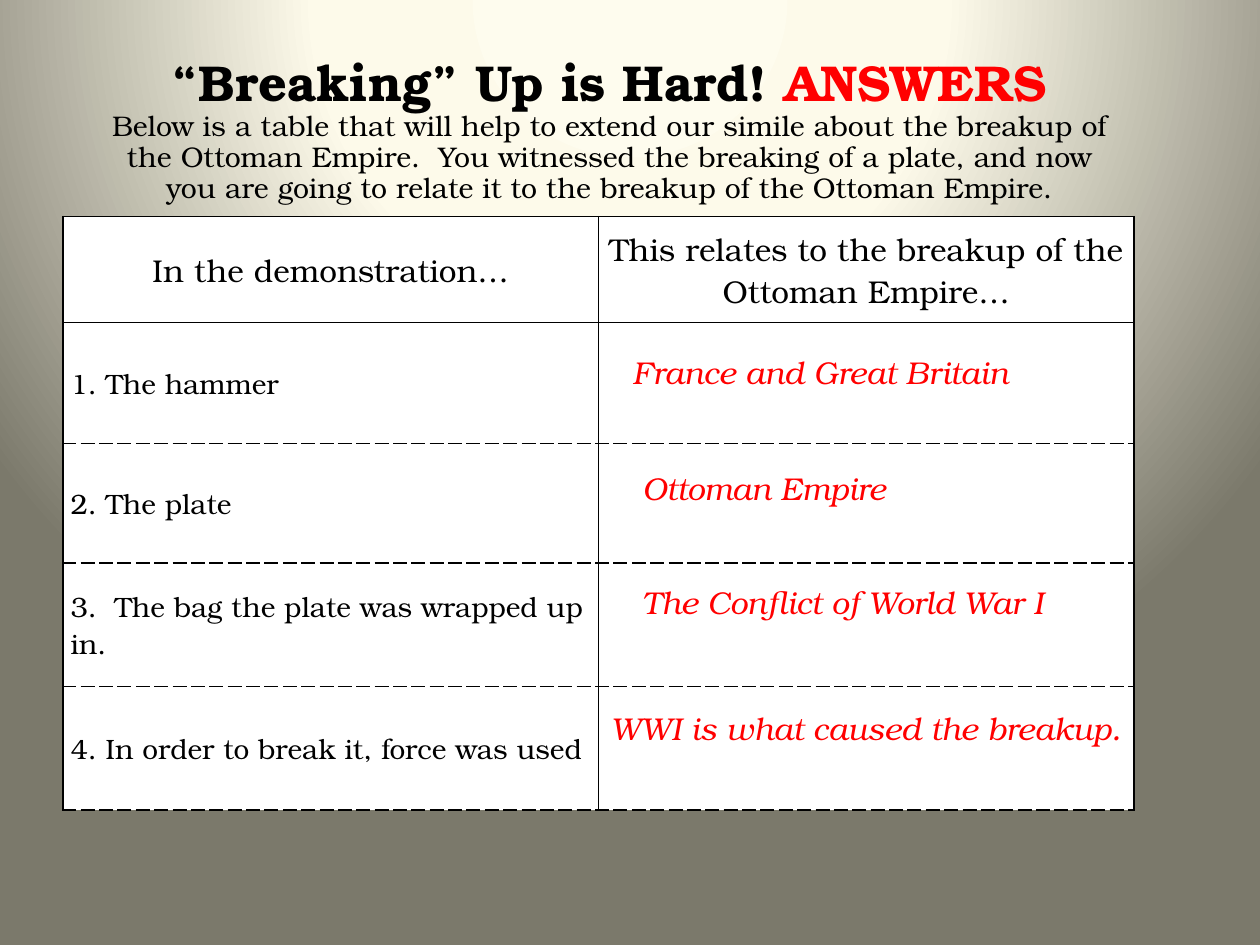
from pptx import Presentation
from pptx.dml.color import RGBColor
from pptx.enum import text
from pptx.oxml import parse_xml
from pptx.oxml.ns import nsdecls, qn
from pptx.util import Inches, Pt

FONT = "TeX Gyre Bonum"
COLORS = {"ink": "000000", "answer": "FF0000", "cell": "FFFFFF",
          "glow": "FEFCEE", "cream": "FDFAEA", "olive": "7B796B"}


def style(r, size, color="ink", bold=False, italic=False):
    r.font.name = FONT
    r.font.size = Pt(size)
    r.font.bold = bold
    r.font.italic = italic
    r.font.color.rgb = RGBColor.from_string(COLORS[color])


def add_border(cell, side, dash):
    cell._tc.get_or_add_tcPr().append(parse_xml(
        f'<a:ln{side} {nsdecls("a")} w="12700"><a:solidFill>'
        f'<a:srgbClr val="{COLORS["ink"]}"/></a:solidFill>'
        f'<a:prstDash val="{dash}"/></a:ln{side}>'))


prs = Presentation()
prs.slide_width, prs.slide_height = Inches(10), Inches(7.5)
s = prs.slides.add_slide(prs.slide_layouts[6])

s.background.fill.gradient()
grad = s._element.find(".//" + qn("a:gradFill"))
stops = "".join(
    f'<a:gs pos="{pos * 1000}"><a:srgbClr val="{COLORS[name]}"/></a:gs>'
    for pos, name in [(0, "glow"), (40, "cream"), (100, "olive")])
grad.getparent().replace(grad, parse_xml(
    f'<a:gradFill {nsdecls("a")} rotWithShape="1"><a:gsLst>{stops}</a:gsLst>'
    '<a:path path="circle"><a:fillToRect l="50000" t="-80000" r="50000" b="180000"/>'
    '</a:path></a:gradFill>'))

title = s.shapes.add_textbox(Inches(0.75), Inches(0.67), Inches(8.17), Inches(1.25))
tf = title.text_frame
tf.word_wrap = True
tf.vertical_anchor = text.MSO_ANCHOR.BOTTOM
tf.margin_bottom = Inches(0.3)
p = tf.paragraphs[0]
p.alignment = text.PP_ALIGN.CENTER
p.line_spacing = 0.9
for words, size, color, bold in [
    ("“Breaking” Up is Hard! ", 28.8, "ink", True),
    ("ANSWERS", 28.8, "answer", True),
    ("Below is a table that will help to extend our simile about the breakup of "
     "the Ottoman Empire.  You witnessed the breaking of a plate, and now you are "
     "going to relate it to the breakup of the Ottoman Empire.", 16.2, "ink", False),
]:
    if not bold:
        p.add_line_break()
    r = p.add_run()
    r.text = words
    style(r, size, color, bold)

rows = [
    (0.84, "In the demonstration…", "This relates to the breakup of the Ottoman Empire…"),
    (0.96, "1. The hammer", ""),
    (0.95, "2. The plate", ""),
    (0.98, "3.  The bag the plate was wrapped up in.", ""),
    (0.98, "4. In order to break it, force was used", ""),
]
table = s.shapes.add_table(len(rows), 2, Inches(0.5), Inches(1.72),
                           Inches(8.5), Inches(4.71)).table
table.first_row = False
table.horz_banding = False
for i, (height, *words) in enumerate(rows):
    table.rows[i].height = Inches(height)
    for j, word in enumerate(words):
        cell = table.cell(i, j)
        for side in "LRTB":
            dashed = (side == "T" and i > 1) or (side == "B" and i > 0)
            add_border(cell, side, "dash" if dashed else "solid")
        cell.fill.solid()
        cell.fill.fore_color.rgb = RGBColor.from_string(COLORS["cell"])
        cell.vertical_anchor = text.MSO_ANCHOR.MIDDLE
        cell.margin_left = cell.margin_right = Inches(0.06)
        cell.margin_top = cell.margin_bottom = 0
        if word:
            cell.text_frame.text = word
            p = cell.text_frame.paragraphs[0]
            p.alignment = text.PP_ALIGN.LEFT if i else text.PP_ALIGN.CENTER
            style(p.runs[0], 16 if i else 18)

for left, top, width, answer in [
    (4.92, 2.75, 3.22, "France and Great Britain"),
    (5, 3.67, 2.17, "Ottoman Empire"),
    (5, 4.58, 3.45, "The Conflict of World War I"),
    (4.75, 5.58, 4.3, "WWI is what caused the breakup."),
]:
    sp = s.shapes.add_textbox(Inches(left), Inches(top), Inches(width), Inches(0.4))
    tf = sp.text_frame
    tf.word_wrap = False
    tf.auto_size = text.MSO_AUTO_SIZE.SHAPE_TO_FIT_TEXT
    tf.text = answer
    style(tf.paragraphs[0].runs[0], 18, "answer", italic=True)

prs.save("out.pptx")
